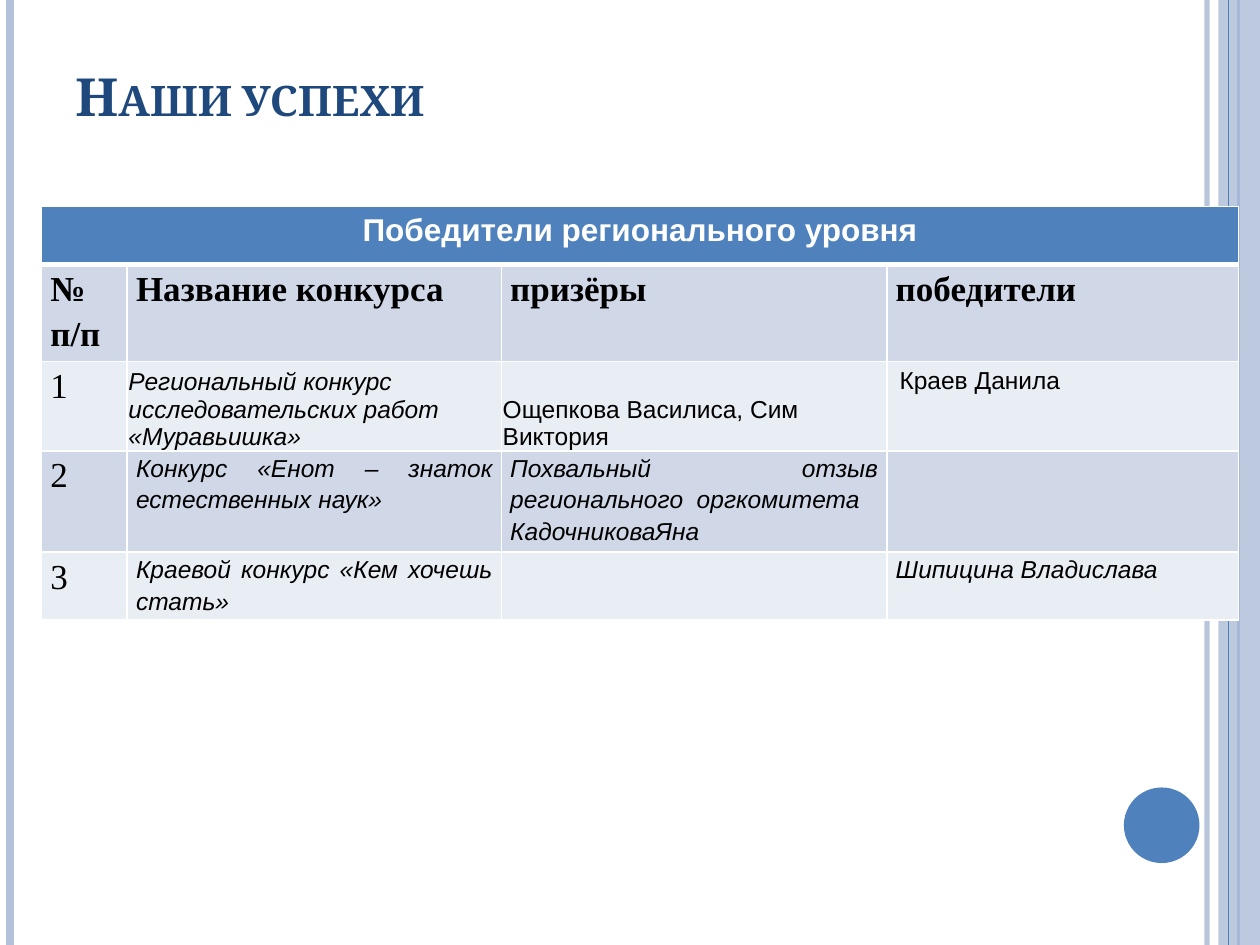
from lxml import etree
from pptx import Presentation
from pptx import util as u
from pptx.dml.color import RGBColor
from pptx.enum import shapes, text
from pptx.oxml.ns import qn


def paint(color, code):
    """Apply a hex colour to a fill or a font colour."""
    if hasattr(color, "solid"):
        color.solid()
        color = color.fore_color
    color.rgb = RGBColor.from_string(code)


def fade(root, pct):
    """Set the opacity of the first colour under an element."""
    clr = next(root.iter(qn("a:srgbClr")))
    etree.SubElement(clr, qn("a:alpha"), val=str(pct * 1000))


deck = Presentation()
deck.slide_width, deck.slide_height = u.Inches(10), u.Inches(7.5)
slide = deck.slides.add_slide(deck.slide_layouts[6])
blue, pale = "4F81BD", "B3C1DB"


# Side stripes, with the broad band between the lines
def stripe(x, code, width):
    line = slide.shapes.add_connector(
        shapes.MSO_CONNECTOR.STRAIGHT,
        u.Inches(x), 0, u.Inches(x), deck.slide_height)
    paint(line.line.fill, code)
    line.line.width = u.Pt(width)
    etree.SubElement(line._element.spPr, qn("a:effectLst"))
    return line


fade(stripe(9.58, pale, 3)._element.spPr, 93)
stripe(0.08, pale, 4.5)
stripe(9.83, blue, 1.5)
kinds = shapes.MSO_SHAPE
for kind, box, code in [(kinds.RECTANGLE, (9.67, 0, 0.33, 7.5), pale),
                        (kinds.OVAL, (8.92, 6.25, 0.6, 0.6), blue)]:
    part = slide.shapes.add_shape(kind, *map(u.Inches, box))
    part.shadow.inherit = False
    paint(part.fill, code)
    part.line.fill.background()
    if kind == kinds.RECTANGLE:
        fade(part._element.spPr, 87)
        stripe(9.75, blue, 0.75)

# Title in small caps
title = slide.shapes.add_textbox(*map(u.Inches, (0.5, 0.3, 8.17, 1.25)))
frame = title.text_frame
frame.word_wrap = True
frame.vertical_anchor = text.MSO_ANCHOR.BOTTOM
frame.margin_bottom = u.Inches(0.54)
run = frame.paragraphs[0].add_run()
run.text = "Наши успехи"
for key, val in {"name": "Cambria", "size": u.Pt(30), "bold": True}.items():
    setattr(run.font, key, val)
paint(run.font.color, "1F497D")
run._r.get_or_add_rPr().set("cap", "small")

# Cell looks: font, paragraph and cell formats
just = {"alignment": text.PP_ALIGN.JUSTIFY, "line_spacing": 1.15}
snug = {"margin_left": u.Inches(0.07), "margin_right": u.Inches(0.07),
        "margin_top": 0, "margin_bottom": 0}
tight = {"margin_left": u.Inches(0.01), "margin_right": u.Inches(0.01),
         "margin_top": u.Inches(0.01), "margin_bottom": 0,
         "vertical_anchor": text.MSO_ANCHOR.BOTTOM}
serif = {"name": "Times New Roman", "size": u.Pt(20), "bold": False}
sans = {"name": "Arial", "size": u.Pt(14), "bold": False}
slant = {**sans, "italic": True}
looks = {
    "top": ({**sans, "size": u.Pt(18), "bold": True},
            {"alignment": text.PP_ALIGN.CENTER}, {}),
    "head": ({**serif, "bold": True}, just, snug),
    "num": (serif, just, snug),
    "item": (slant, just, snug),
    "low": (slant, {}, tight),
    "name": (sans, {}, tight),
    "plain": (sans, {}, {}),
}
rows = [
    [("top", "Победители регионального уровня")] + [("top", "")] * 3,
    [("head", "№ п/п"), ("head", "Название конкурса"),
     ("head", "призёры"), ("head", "победители")],
    [("num", "1"),
     ("low", "Региональный конкурс исследовательских работ «Муравьишка»"),
     ("name", "Ощепкова Василиса, Сим Виктория"),
     ("plain", "Краев Данила")],
    [("num", "2"), ("item", "Конкурс «Енот – знаток естественных наук»"),
     ("item", "Похвальный отзыв регионального  оргкомитета\nКадочниковаЯна"),
     ("plain", "")],
    [("num", "3"), ("item", "Краевой конкурс «Кем хочешь стать»"),
     ("plain", ""), ("item", "Шипицина Владислава")],
]
fills = [blue, "D0D8E8", "E9EDF4", "D0D8E8", "E9EDF4"]

# Table of winners
grid = slide.shapes.add_table(
    5, 4, *map(u.Inches, (0.33, 1.64, 9.5, 3.28))).table
for col, wide in zip(grid.columns, (0.68, 2.97, 3.06, 2.79)):
    col.width = u.Inches(wide)
for row, high in zip(grid.rows, [0.46] + [0.41] * 4):
    row.height = u.Inches(high)
grid.cell(0, 0).merge(grid.cell(0, 3))

for r, row in enumerate(rows):
    for c, (look, words) in enumerate(row):
        cell = grid.cell(r, c)
        font, para, box = looks[look]
        for key, val in box.items():
            setattr(cell, key, val)

        # White borders, thicker around the top row's lower edge
        props = cell._tc.get_or_add_tcPr()
        for side in "LRTB":
            thick = (r, side) in [(0, "B"), (1, "T")]
            edge = etree.SubElement(props, qn("a:ln" + side),
                                    w=str(u.Pt(3 if thick else 1)))
            solid = etree.SubElement(edge, qn("a:solidFill"))
            etree.SubElement(solid, qn("a:srgbClr"), val="FFFFFF")
        paint(cell.fill, fills[r])

        if not words:
            continue
        cell.text = words
        for p in cell.text_frame.paragraphs:
            for key, val in para.items():
                setattr(p, key, val)
            for run in p.runs:
                for key, val in font.items():
                    setattr(run.font, key, val)
                paint(run.font.color, "000000" if r else "FFFFFF")

deck.save("out.pptx")
